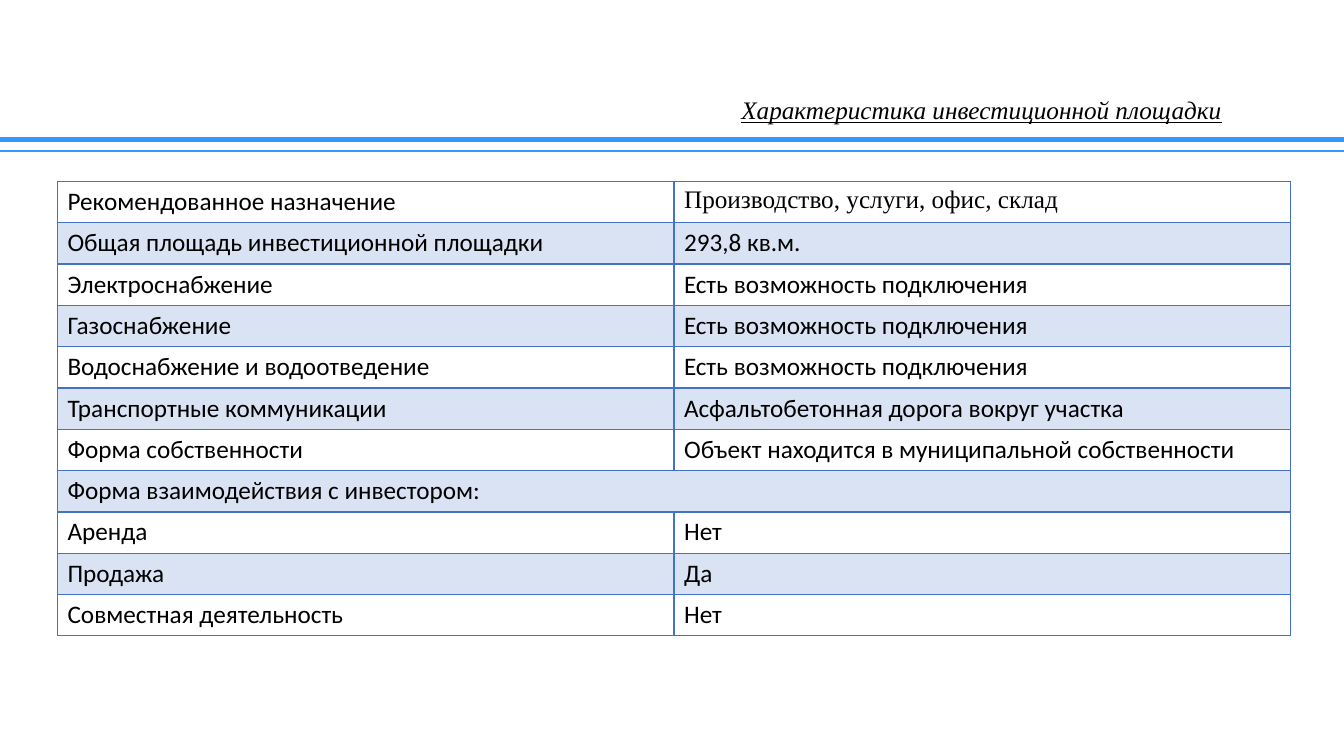
"""Build the slide describing an investment site as a two-column table."""
from dataclasses import dataclass

from lxml.etree import SubElement
from pptx import Presentation
from pptx.dml.color import RGBColor as Color
from pptx.enum.shapes import MSO_CONNECTOR as Connector
from pptx.enum.text import MSO_ANCHOR as Anchor, MSO_AUTO_SIZE as AutoSize, PP_ALIGN as Align
from pptx.oxml.ns import qn
from pptx.slide import Slide
from pptx.table import _Cell as Cell
from pptx.text.text import _Paragraph as Paragraph
from pptx.util import Inches, Pt


@dataclass(frozen=True)
class Theme:
    text: str = "000000"
    rule: str = "3399FF"
    border: str = "4472C4"
    band: str = "DAE3F3"
    body_font: str = "Calibri"
    serif_font: str = "Times New Roman"
    size: float = 18
    border_width: float = 1


@dataclass(frozen=True)
class Rule:
    top: float
    width: float


@dataclass(frozen=True)
class Feature:
    label: str
    value: str = ""
    value_font: str = Theme.body_font


THEME = Theme()
SLIDE_WIDTH, SLIDE_HEIGHT = 13.33, 7.5
ROW_HEIGHT = 0.41
TITLE = "Характеристика инвестиционной площадки"
CONNECTABLE = "Есть возможность подключения"
RULES = [Rule(1.38, 3.5), Rule(1.5, 1.5)]
FEATURES = [
    Feature("Рекомендованное назначение", "Производство, услуги, офис, склад", THEME.serif_font),
    Feature("Общая площадь инвестиционной площадки", "293,8 кв.м."),
    Feature("Электроснабжение", CONNECTABLE),
    Feature("Газоснабжение", CONNECTABLE),
    Feature("Водоснабжение и водоотведение", CONNECTABLE),
    Feature("Транспортные коммуникации", "Асфальтобетонная дорога вокруг участка"),
    Feature("Форма собственности", "Объект находится в муниципальной собственности"),
    Feature("Форма взаимодействия с инвестором:"),
    Feature("Аренда", "Нет"),
    Feature("Продажа", "Да"),
    Feature("Совместная деятельность", "Нет"),
]


def add_text(para: Paragraph, text: str, font: str, emphasis: bool = False) -> None:
    span = para.add_run()
    span.text = text
    span.font.name = font
    span.font.size = Pt(THEME.size)
    span.font.bold = False
    span.font.italic = span.font.underline = emphasis
    span.font.color.rgb = Color.from_string(THEME.text)


def add_title(slide: Slide) -> None:
    title = slide.shapes.title
    title.left, title.top = Inches(6.67), Inches(0.97)
    title.width, title.height = Inches(6.13), Inches(0.27)
    box = title.text_frame
    box.word_wrap = True
    box.auto_size = AutoSize.NONE
    box.vertical_anchor = Anchor.MIDDLE
    para = box.paragraphs[0]
    para.alignment = Align.CENTER
    para.line_spacing = 0.9
    add_text(para, TITLE, THEME.serif_font, emphasis=True)


def add_rule(slide: Slide, rule: Rule) -> None:
    line = slide.shapes.add_connector(
        Connector.STRAIGHT, 0, Inches(rule.top), Inches(SLIDE_WIDTH), Inches(rule.top))
    line.line.color.rgb = Color.from_string(THEME.rule)
    line.line.width = Pt(rule.width)
    SubElement(line._element.spPr, qn("a:effectLst"))


def format_cell(cell: Cell, banded: bool) -> None:
    properties = cell._tc.get_or_add_tcPr()
    for side in ("lnL", "lnR", "lnT", "lnB"):
        border = SubElement(properties, qn(f"a:{side}"), w=str(Pt(THEME.border_width)))
        fill = SubElement(border, qn("a:solidFill"))
        SubElement(fill, qn("a:srgbClr"), val=THEME.border)
    if banded:
        cell.fill.solid()
        cell.fill.fore_color.rgb = Color.from_string(THEME.band)
    else:
        cell.fill.background()


def add_features(slide: Slide, features: list[Feature]) -> None:
    frame = slide.shapes.add_table(
        len(features), 2, Inches(0.57), Inches(1.8),
        Inches(12.23), Inches(ROW_HEIGHT * len(features)))
    table = frame.table
    table.first_row = table.horz_banding = False
    for index, feature in enumerate(features):
        label, value = table.cell(index, 0), table.cell(index, 1)
        for cell in (label, value):
            format_cell(cell, banded=index % 2 == 1)
        add_text(label.text_frame.paragraphs[0], feature.label, THEME.body_font)
        if feature.value:
            add_text(value.text_frame.paragraphs[0], feature.value, feature.value_font)
        else:
            label.merge(value)


def main() -> None:
    deck = Presentation()
    deck.slide_width, deck.slide_height = Inches(SLIDE_WIDTH), Inches(SLIDE_HEIGHT)
    page = deck.slides.add_slide(deck.slide_layouts.get_by_name("Title Only"))
    for rule in RULES:
        add_rule(page, rule)
    add_title(page)
    add_features(page, FEATURES)
    deck.save("out.pptx")


if __name__ == "__main__":
    main()
